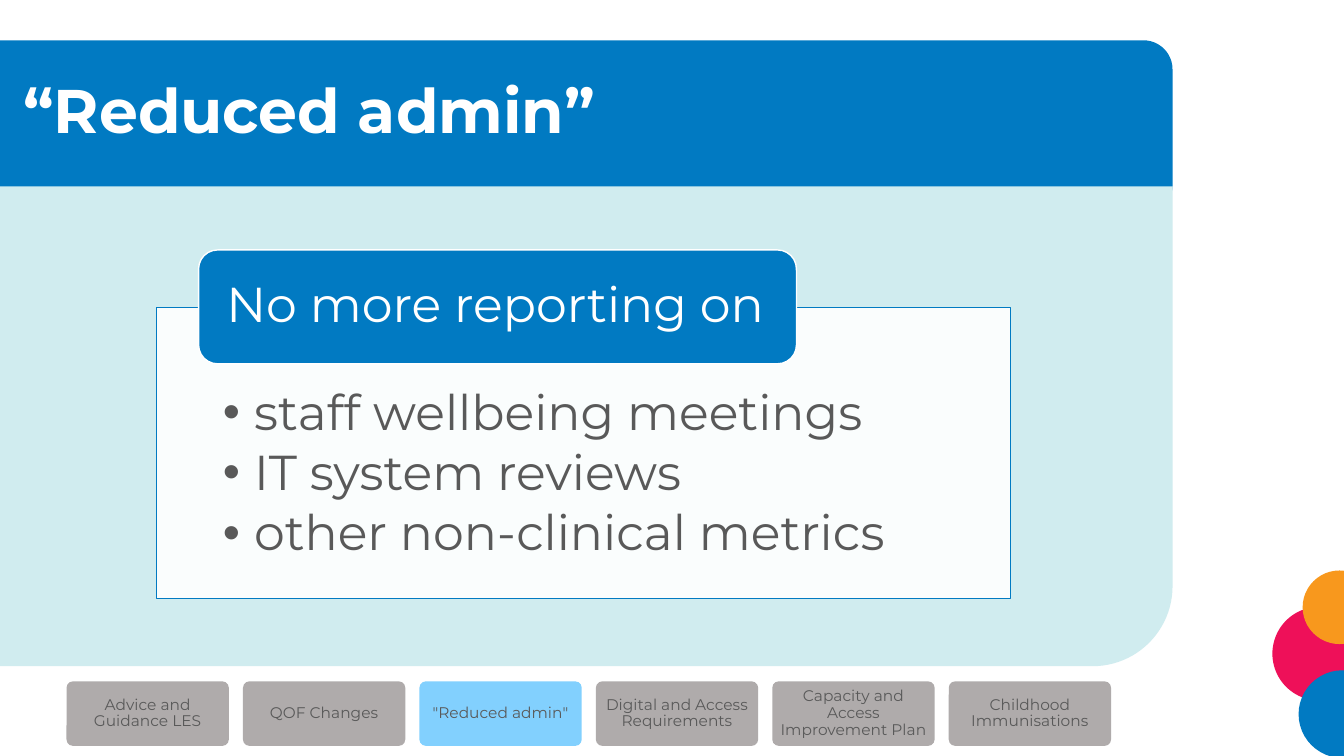
from dataclasses import dataclass

from lxml import etree
from pptx import Presentation
from pptx.dml.color import RGBColor
from pptx.enum import shapes, text
from pptx.oxml import ns
from pptx.util import Inches, Pt

TITLE = "“Reduced admin”"
HEADING = "No more reporting on"
DROPPED_REPORTS = ["staff wellbeing meetings", "IT system reviews", "other non-clinical metrics"]
TOPICS = [
    "Advice and Guidance LES",
    "QOF Changes",
    '"Reduced admin"',
    "Digital and Access Requirements",
    "Capacity and Access Improvement Plan",
    "Childhood Immunisations",
]
CURRENT_TOPIC = 2


@dataclass(frozen=True)
class Theme:
    font: str = "Montserrat"
    blue: str = "017AC2"
    aqua: str = "D0ECEF"
    pink: str = "EE1059"
    orange: str = "F8981D"
    sky: str = "82D0FE"
    grey: str = "AFABAB"
    ink: str = "595959"
    white: str = "FFFFFF"
    title_size: int = 44
    body_size: int = 35
    topic_size: int = 11


THEME = Theme()
CIRCLES = [
    (12.62, 6.02, 0.93, THEME.pink),
    (12.88, 6.65, 0.87, THEME.blue),
    (12.92, 5.66, 0.73, THEME.orange),
]
TOPIC_LEFT, TOPIC_TOP, TOPIC_STEP = 0.66, 6.76, 1.75
TOPIC_WIDTH, TOPIC_HEIGHT = 1.61, 0.64


def place(shape, left, top, width, height):
    shape.left, shape.top = Inches(left), Inches(top)
    shape.width, shape.height = Inches(width), Inches(height)


def add_block(slide, kind, box, fill, line=None):
    block = slide.shapes.add_shape(kind, *map(Inches, box))
    block.shadow.inherit = False
    block.fill.solid()
    block.fill.fore_color.rgb = RGBColor.from_string(fill)
    if line:
        block.line.color.rgb = RGBColor.from_string(line)
        block.line.width = Pt(1)
    else:
        block.line.fill.background()
    return block


def write(shape, lines, *, size, color, bold=False, align=text.PP_ALIGN.LEFT,
          anchor=text.MSO_ANCHOR.MIDDLE, insets=(0.1, 0.05, 0.1, 0.05), after=0, bullet=None):
    frame = shape.text_frame
    frame.word_wrap = True
    frame.auto_size = text.MSO_AUTO_SIZE.NONE
    frame.vertical_anchor = anchor
    (frame.margin_left, frame.margin_top,
     frame.margin_right, frame.margin_bottom) = map(Inches, insets)
    for index, line in enumerate(lines):
        paragraph = frame.add_paragraph() if index else frame.paragraphs[0]
        if bullet:
            paragraph.level = 1
            properties = paragraph._p.get_or_add_pPr()
            properties.set("marL", str(Inches(0.31)))
            properties.set("indent", str(-Inches(0.31)))
            etree.SubElement(properties, ns.qn("a:buChar")).set("char", bullet)
        paragraph.alignment = align
        paragraph.line_spacing = 0.9
        paragraph.space_before = Pt(0)
        paragraph.space_after = Pt(after)
        run = paragraph.add_run()
        run.text = line
        run.font.name = THEME.font
        run.font.size = Pt(size)
        run.font.bold = bold
        run.font.color.rgb = RGBColor.from_string(color)


def add_backdrop(slide):
    kinds = shapes.MSO_SHAPE
    add_block(slide, kinds.ROUNDED_RECTANGLE, (-0.4, 0.4, 12.03, 1.73), THEME.blue)
    canvas = add_block(slide, kinds.ROUND_1_RECTANGLE, (-0.11, 1.85, 11.74, 4.76), THEME.aqua)
    canvas.element.spPr.find(ns.qn("a:xfrm")).set("flipV", "1")
    for left, top, diameter, color in CIRCLES:
        add_block(slide, kinds.OVAL, (left, top, diameter, diameter), color)


def add_topics(slide):
    for index, topic in enumerate(TOPICS):
        box = (TOPIC_LEFT + index * TOPIC_STEP, TOPIC_TOP, TOPIC_WIDTH, TOPIC_HEIGHT)
        fill = THEME.sky if index == CURRENT_TOPIC else THEME.grey
        tab = add_block(slide, shapes.MSO_SHAPE.ROUNDED_RECTANGLE, box, fill)
        tab.adjustments[0] = 0.1
        write(tab, [topic], size=THEME.topic_size, color=THEME.ink,
              align=text.PP_ALIGN.CENTER, insets=(0.05,) * 4, after=3.85)


def add_reports(slide, panel):
    place(panel, 1.55, 3.05, 8.47, 2.89)
    panel.fill.solid()
    panel.fill.fore_color.rgb = RGBColor.from_string(THEME.white)
    tint = panel.element.spPr.find(".//" + ns.qn("a:srgbClr"))
    etree.SubElement(tint, ns.qn("a:alpha")).set("val", "90000")
    panel.line.color.rgb = RGBColor.from_string(THEME.blue)
    panel.line.width = Pt(1)
    write(panel, DROPPED_REPORTS, size=THEME.body_size, color=THEME.ink,
          anchor=text.MSO_ANCHOR.TOP, insets=(0.66, 0.8, 0.66, 0.27), after=5.25, bullet="•")
    heading = add_block(slide, shapes.MSO_SHAPE.ROUNDED_RECTANGLE, (1.97, 2.48, 5.93, 1.13),
                        THEME.blue, THEME.white)
    write(heading, [HEADING], size=THEME.body_size, color=THEME.white,
          insets=(0.22, 0, 0.22, 0), after=12.25)


def main():
    """Build the slide on reduced admin and save it."""
    deck = Presentation()
    deck.slide_width, deck.slide_height = Inches(13.33), Inches(7.5)
    slide = deck.slides.add_slide(deck.slide_layouts[1])
    title, panel = slide.placeholders
    add_backdrop(slide)
    add_topics(slide)
    for placeholder in (title, panel):
        slide.shapes.element.append(placeholder.element)
    place(title, 0.13, 0.4, 11.5, 1.45)
    write(title, [TITLE], size=THEME.title_size, color=THEME.white, bold=True)
    add_reports(slide, panel)
    deck.save("out.pptx")


if __name__ == "__main__":
    main()
